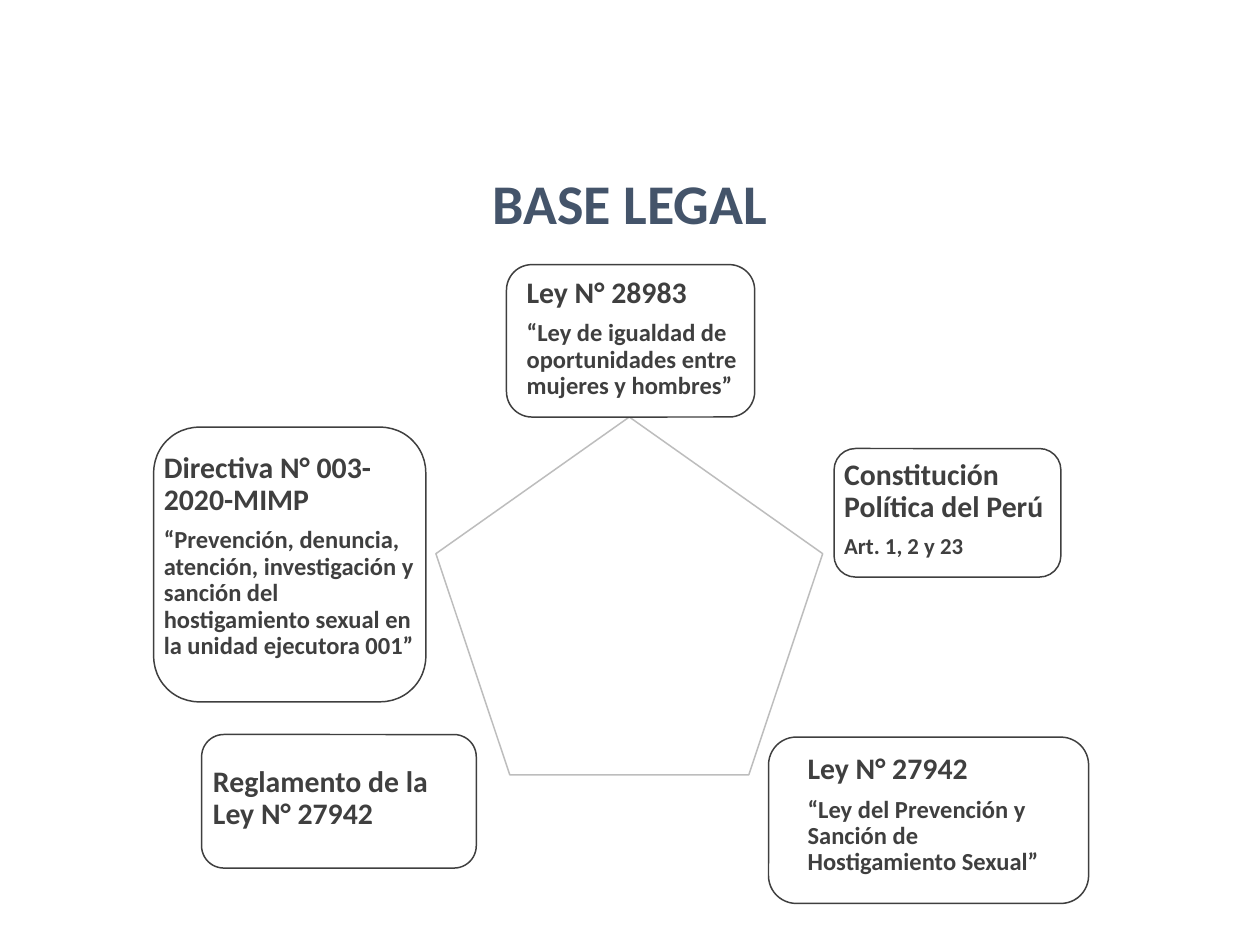
from pptx import Presentation
from pptx.dml.color import RGBColor
from pptx.enum.shapes import MSO_SHAPE
from pptx.enum.text import MSO_ANCHOR, PP_ALIGN
from pptx.util import Inches, Pt

WHITE = RGBColor(0xFF, 0xFF, 0xFF)
CHARCOAL = RGBColor(0x3F, 0x3F, 0x3F)
SILVER = RGBColor(0xBD, 0xBD, 0xBD)
SLATE = RGBColor(0x44, 0x54, 0x6A)

HEADING_SIZE = 17
LAWS = [
    ((4.02, 2.1, 1.97, 1.21), (4.13, 2.3, 1.8, 0.78), "Ley N° 28983",
     "“Ley de igualdad de oportunidades entre mujeres y hombres”", 14),
    ((6.62, 3.56, 1.8, 1.02), (6.65, 3.61, 1.77, 0.87),
     "Constitución Política del Perú", "Art. 1, 2 y 23", 13),
    ((6.1, 5.85, 2.54, 1.32), (6.36, 5.91, 2.06, 1.12), "Ley N° 27942",
     "“Ley del Prevención y Sanción de Hostigamiento Sexual”", 14),
    ((1.6, 5.83, 2.18, 1.06), (1.64, 5.89, 2.14, 0.9),
     "Reglamento de la Ley N° 27942", None, None),
    ((1.22, 3.39, 2.16, 2.18), (1.25, 3.49, 2.13, 1.85),
     "Directiva N° 003-2020-MIMP",
     "“Prevención, denuncia, atención, investigación y sanción del "
     "hostigamiento sexual en la unidad ejecutora 001”", 14),
]


def add_outline(page, kind, area, color):
    shape = page.shapes.add_shape(kind, *map(Inches, area))
    shape.shadow.inherit = False
    shape.fill.solid()
    shape.fill.fore_color.rgb = WHITE
    shape.line.color.rgb = color
    shape.line.width = Pt(0.85)


def add_box(page, area, margin=None, anchor=MSO_ANCHOR.TOP):
    frame = page.shapes.add_textbox(*map(Inches, area)).text_frame
    frame.word_wrap = True
    frame.vertical_anchor = anchor
    if margin is not None:
        frame.margin_left = frame.margin_right = Inches(margin)
        frame.margin_top = frame.margin_bottom = Inches(margin)
    return frame


def write(para, text, size, color=CHARCOAL, align=PP_ALIGN.LEFT, spacing=None, after=0):
    para.alignment = align
    para.space_after = Pt(after)
    if spacing:
        para.line_spacing = spacing
    span = para.add_run()
    span.text = text
    span.font.name = "Calibri"
    span.font.size = Pt(size)
    span.font.bold = True
    span.font.color.rgb = color


def add_law(page, card, area, heading, detail, detail_size):
    add_outline(page, MSO_SHAPE.ROUNDED_RECTANGLE, card, CHARCOAL)
    frame = add_box(page, area, margin=0.05, anchor=MSO_ANCHOR.MIDDLE)
    write(frame.paragraphs[0], heading, HEADING_SIZE, spacing=0.9, after=6)
    if detail:
        write(frame.add_paragraph(), detail, detail_size, spacing=0.9, after=5)


def main():
    deck = Presentation()
    deck.slide_width, deck.slide_height = Inches(10), Inches(7.5)
    page = deck.slides.add_slide(deck.slide_layouts[6])
    add_outline(page, MSO_SHAPE.REGULAR_PENTAGON, (3.46, 3.31, 3.07, 2.84), SILVER)
    for law in LAWS:
        add_law(page, *law)
    title = add_box(page, (0.26, 1.29, 9.48, 0.64))
    write(title.paragraphs[0], "BASE LEGAL", 32, color=SLATE, align=PP_ALIGN.CENTER)
    deck.save("out.pptx")


if __name__ == "__main__":
    main()
